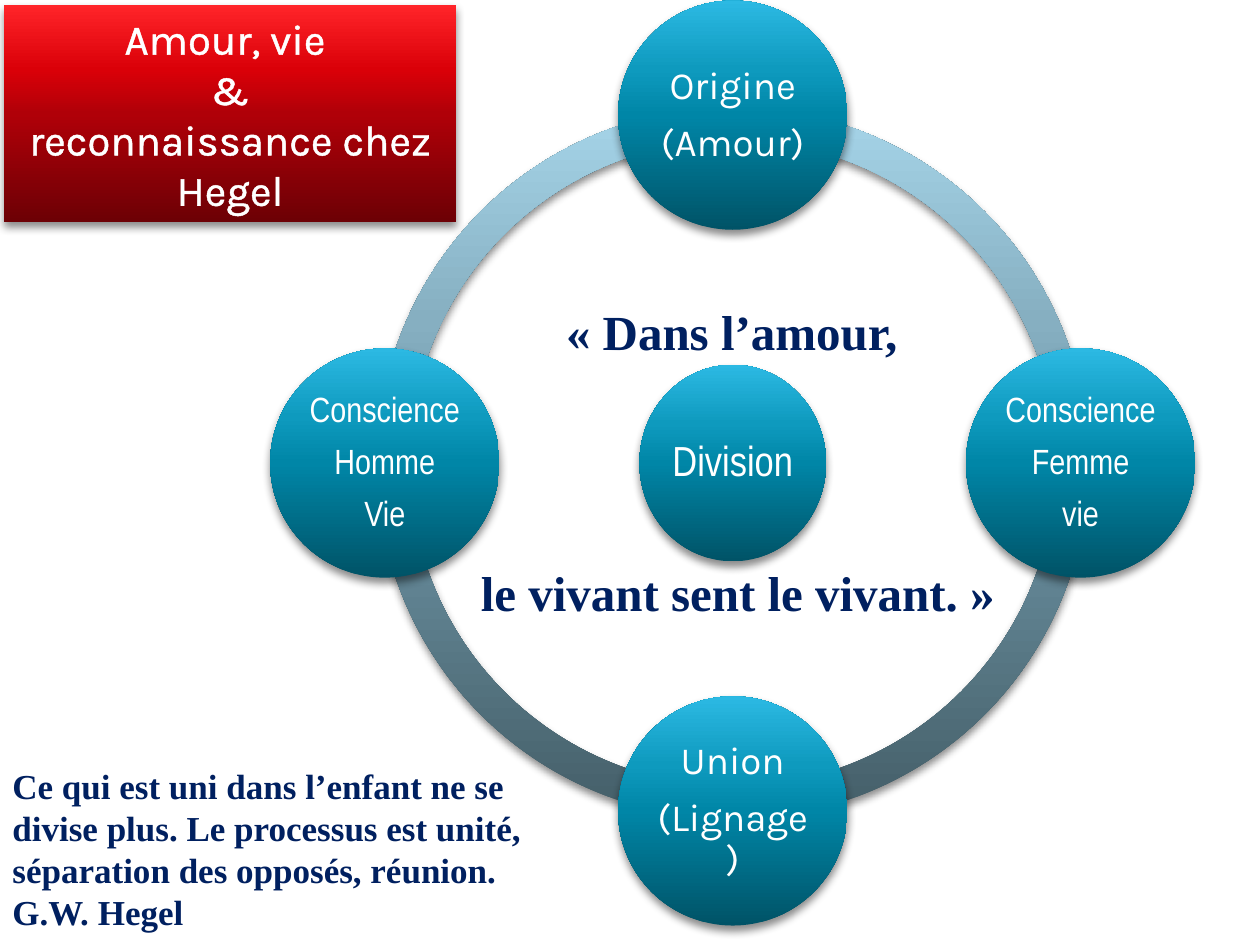
from math import cos, radians, sin

from pptx import Presentation
from pptx.dml.color import RGBColor
from pptx.enum import shapes, text
from pptx.oxml import parse_xml
from pptx.oxml.ns import nsdecls, qn
from pptx.util import Pt

COLORS = {"white": "FFFFFF", "navy": "002060", "shadow": "000000"}

# Gradient colours, from bottom to top
GRADIENTS = {
    "ring": ("445E68", "6F96A7", "86AFC1", "A6D5E9"),
    "node": ("005367", "0086A7", "0E9ABE", "2CB9E3"),
    "title": ("6D0005", "B00008", "DA0008", "FF2429"),
}
STOPS = (0, 50, 70, 100)


class Board:
    """Holds the slide and the style shared by its elements."""

    def __init__(self, slide):
        self.slide = slide

    def finish(self, shape, gradient):
        """Vertical gradient, no outline, soft shadow below."""
        shape.fill.gradient()
        shape.fill.gradient_angle = 90
        shape.line.fill.background()
        shape.shadow.inherit = False
        properties = shape._element.spPr
        stops = properties.find(".//" + qn("a:gsLst"))
        for stop in list(stops):
            stops.remove(stop)
        for position, color in zip(STOPS, GRADIENTS[gradient]):
            stops.append(parse_xml(
                f'<a:gs {nsdecls("a")} pos="{position * 1000}">'
                f'<a:srgbClr val="{color}"/></a:gs>'))
        properties.find(qn("a:effectLst")).append(parse_xml(
            f'<a:outerShdw {nsdecls("a")} blurRad="{Pt(5)}" dist="{Pt(3)}" '
            f'dir="5400000" rotWithShape="0"><a:srgbClr val="{COLORS["shadow"]}">'
            '<a:alpha val="45000"/></a:srgbClr></a:outerShdw>'))

    def set_text(self, frame, lines, font, size, color, align, bold=False):
        frame.word_wrap = True
        frame.text = "\n".join(lines)
        for paragraph in frame.paragraphs:
            paragraph.alignment = align
            paragraph.font.name = font
            paragraph.font.size = Pt(size)
            paragraph.font.bold = bold
            paragraph.font.color.rgb = RGBColor.from_string(COLORS[color])

    def title(self, left, top, width, height, wording):
        title = self.slide.shapes.title
        title.left, title.top = Pt(left), Pt(top)
        title.width, title.height = Pt(width), Pt(height)
        self.finish(title, "title")
        frame = title.text_frame
        self.set_text(frame, [wording], "Karla", 24, "white", text.PP_ALIGN.CENTER)
        frame.auto_size = text.MSO_AUTO_SIZE.NONE
        frame.vertical_anchor = text.MSO_ANCHOR.MIDDLE
        for run in frame.paragraphs[0].runs:
            run._r.get_or_add_rPr().insert(0, parse_xml(
                f'<a:ln {nsdecls("a")} w="{Pt(1.1)}"><a:solidFill>'
                f'<a:srgbClr val="{COLORS["white"]}"/></a:solidFill></a:ln>'))

    def arc(self, center, diameter, start, end):
        x, y = (Pt(c - diameter / 2) for c in center)
        arc = self.slide.shapes.add_shape(
            shapes.MSO_SHAPE.BLOCK_ARC, x, y, Pt(diameter), Pt(diameter))
        for index, value in enumerate((start, end, 0.046)):
            arc.adjustments[index] = value
        self.finish(arc, "ring")

    def node(self, center, width, height, lines, font, size):
        x, y = center
        node = self.slide.shapes.add_shape(
            shapes.MSO_SHAPE.OVAL, Pt(x - width / 2), Pt(y - height / 2),
            Pt(width), Pt(height))
        self.finish(node, "node")
        frame = node.text_frame
        frame.margin_left = frame.margin_right = Pt(2)
        frame.margin_top = frame.margin_bottom = Pt(2)
        frame.vertical_anchor = text.MSO_ANCHOR.MIDDLE
        self.set_text(frame, lines, font, size, "white", text.PP_ALIGN.CENTER)
        for paragraph in frame.paragraphs:
            paragraph.line_spacing = 0.9
            paragraph.space_after = Pt(round(0.4 * size, 1))

    def quote(self, left, top, width, height, lines, size, align):
        box = self.slide.shapes.add_textbox(
            Pt(left), Pt(top), Pt(width), Pt(height))
        frame = box.text_frame
        self.set_text(frame, lines, "Times New Roman", size, "navy", align, bold=True)
        frame.auto_size = text.MSO_AUTO_SIZE.SHAPE_TO_FIT_TEXT
        return frame


def main():
    deck = Presentation()
    deck.slide_width, deck.slide_height = Pt(720), Pt(540)
    board = Board(deck.slides.add_slide(deck.slide_layouts[5]))

    # Title
    board.title(2.2, 2.9, 258.5, 123.8,
                "Amour, vie \v&\vreconnaissance chez Hegel")

    # Ring of four quarter arcs; adjustments count 54 per quarter turn
    center = (418.7, 264.6)
    for start in (108, 54, 0, 162):
        board.arc(center, 406.8, start, (start + 54) % 216)

    # Division in the centre, the four moments around it, clockwise from the top
    board.node(center, 106.6, 112.3, ["Division"], "Arial Narrow", 24)
    moments = [
        (["Origine", "(Amour)"], "Karla", 22),
        (["Conscience", "Femme", "vie"], "Arial Narrow", 20),
        (["Union", "(Lignage)"], "Karla", 22),
        (["Conscience", "Homme", "Vie"], "Arial Narrow", 20),
    ]
    orbit, diameter = 198.8, 131
    for index, (lines, font, size) in enumerate(moments):
        angle = radians(90 * index - 90)
        place = (center[0] + orbit * cos(angle), center[1] + orbit * sin(angle))
        board.node(place, diameter, diameter, lines, font, size)

    # Quotations
    board.quote(0, 433.4, 320.4, 104.4, [
        "Ce qui est uni dans l’enfant ne se divise plus. "
        "Le processus est unité, séparation des opposés, réunion.",
        "G.W. Hegel"], 20, text.PP_ALIGN.LEFT)
    love = board.quote(258.5, 168.5, 326.2, 191.5, [
        "« Dans l’amour, ", "le vivant sent le vivant. »"],
        28, text.PP_ALIGN.CENTER)
    love.paragraphs[1].space_before = Pt(116)

    deck.save("out.pptx")


if __name__ == "__main__":
    main()
